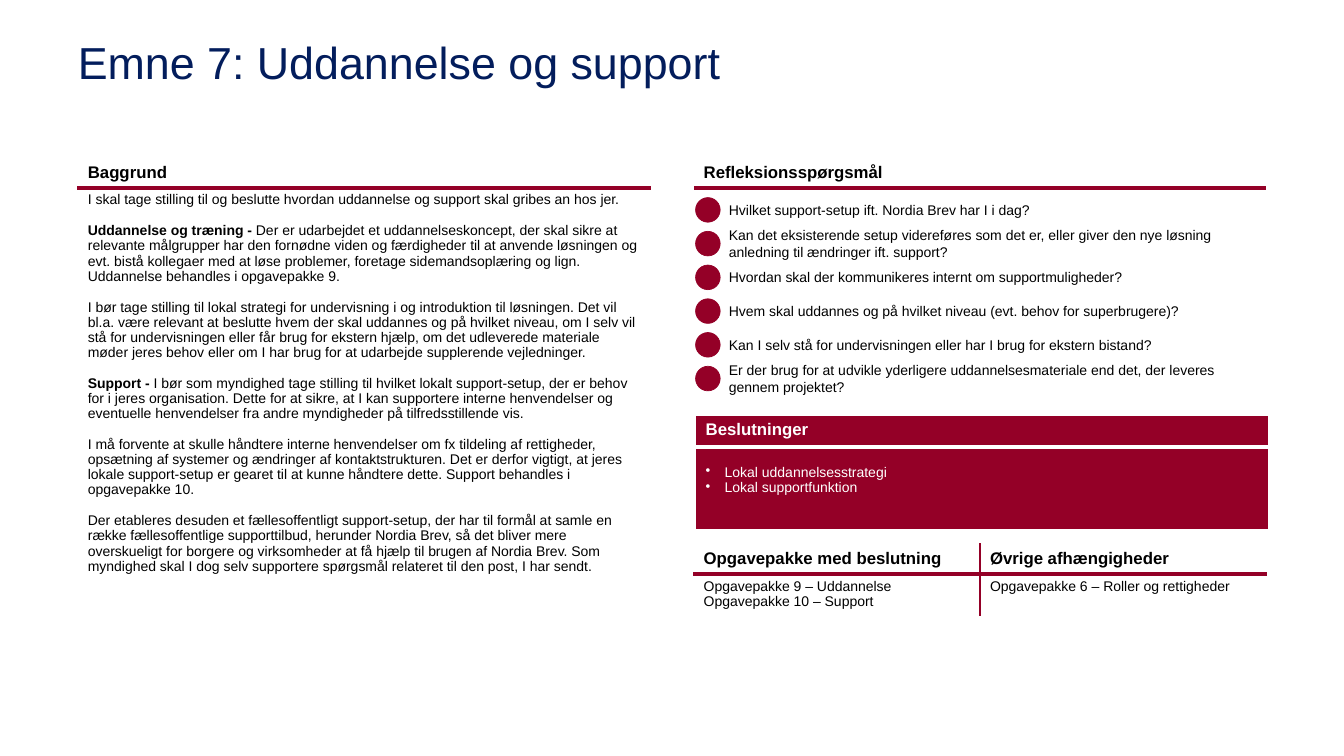
import dataclasses

import lxml.etree
import pptx
import pptx.dml.color
import pptx.enum.shapes
import pptx.enum.text
import pptx.oxml.ns
import pptx.util

Cm, Pt = pptx.util.Cm, pptx.util.Pt
MIDDLE = pptx.enum.text.MSO_ANCHOR.MIDDLE
TOP = pptx.enum.text.MSO_ANCHOR.TOP
LEFT = pptx.enum.text.PP_ALIGN.LEFT

TITLE = "Emne 7: Uddannelse og support"

# Each paragraph is a bold lead-in and the running text after it.
BACKGROUND = [
    ("", "I skal tage stilling til og beslutte hvordan uddannelse og support skal gribes an hos jer."),
    ("Uddannelse og træning - ",
     "Der er udarbejdet et uddannelseskoncept, der skal sikre at relevante målgrupper har den "
     "fornødne viden og færdigheder til at anvende løsningen og evt. bistå kollegaer med at løse "
     "problemer, foretage sidemandsoplæring og lign. Uddannelse behandles i opgavepakke 9."),
    ("", "I bør tage stilling til lokal strategi for undervisning i og introduktion til løsningen. "
     "Det vil bl.a. være relevant at beslutte hvem der skal uddannes og på hvilket niveau, om I "
     "selv vil stå for undervisningen eller får brug for ekstern hjælp, om det udleverede "
     "materiale møder jeres behov eller om I har brug for at udarbejde supplerende vejledninger."),
    ("Support - ",
     "I bør som myndighed tage stilling til hvilket lokalt support-setup, der er behov for i "
     "jeres organisation. Dette for at sikre, at I kan supportere interne henvendelser og "
     "eventuelle henvendelser fra andre myndigheder på tilfredsstillende vis."),
    ("", "I må forvente at skulle håndtere interne henvendelser om fx tildeling af rettigheder, "
     "opsætning af systemer og ændringer af kontaktstrukturen. Det er derfor vigtigt, at jeres "
     "lokale support-setup er gearet til at kunne håndtere dette. Support behandles i "
     "opgavepakke 10."),
    ("", "Der etableres desuden et fællesoffentligt support-setup, der har til formål at samle en "
     "række fællesoffentlige supporttilbud, herunder Nordia Brev, så det bliver mere "
     "overskueligt for borgere og virksomheder at få hjælp til brugen af Nordia Brev. Som "
     "myndighed skal I dog selv supportere spørgsmål relateret til den post, I har sendt."),
]
QUESTIONS = [
    "Hvilket support-setup ift. Nordia Brev har I i dag?",
    "Kan det eksisterende setup videreføres som det er, eller giver den nye løsning "
    "anledning til ændringer ift. support?",
    "Hvordan skal der kommunikeres internt om supportmuligheder?",
    "Hvem skal uddannes og på hvilket niveau (evt. behov for superbrugere)?",
    "Kan I selv stå for undervisningen eller har I brug for ekstern bistand?",
    "Er der brug for at udvikle yderligere uddannelsesmateriale end det, der leveres "
    "gennem projektet?",
]
DECISIONS = [("", "Lokal uddannelsesstrategi"), ("", "Lokal supportfunktion")]
PACKAGES = [("", "Opgavepakke 9 – Uddannelse"), ("", "Opgavepakke 10 – Support")]
DEPENDENCIES = [("", "Opgavepakke 6 – Roller og rettigheder")]


@dataclasses.dataclass(frozen=True)
class Theme:
    font: str = "Arial"
    navy: str = "031D5C"
    wine: str = "940027"
    black: str = "000000"
    white: str = "FFFFFF"
    title_size: int = 32
    heading_size: int = 12
    body_size: int = 10
    rule: float = 3
    divider: float = 1


THEME = Theme()
LEFT_COLUMN, RIGHT_COLUMN, PANEL_LEFT = 1.96, 17.48, 17.53
COLUMN_WIDTH, HEADING_TOP, HEADING_HEIGHT = 14.43, 3.99, 0.74
DOT_TOP, DOT_SIZE, DOT_PITCH = 4.98, 0.62, 0.85
QUESTION_LEFT, QUESTION_WIDTH = 18.37, 13.59


def rgb(colour):
    return pptx.dml.color.RGBColor.from_string(colour)


def write(frame, paragraphs, size, colour, bold=False, line_spacing=1.0, gap=0, bullet=False):
    """Fill a frame with (bold lead-in, text) paragraphs, gap points apart."""
    for index, (lead, text) in enumerate(paragraphs):
        paragraph = frame.add_paragraph() if index else frame.paragraphs[0]
        paragraph.alignment = LEFT
        paragraph.line_spacing = line_spacing
        paragraph.space_before = Pt(gap if index else 0)
        if bullet:
            properties = paragraph._p.get_or_add_pPr()
            properties.set("marL", str(Cm(0.48)))
            properties.set("indent", str(-Cm(0.48)))
            mark = lxml.etree.SubElement(properties, pptx.oxml.ns.qn("a:buChar"))
            mark.set("char", "•")
        for part, strong in ((lead, True), (text, bold)):
            if part:
                run = paragraph.add_run()
                run.text = part
                run.font.name = THEME.font
                run.font.size = Pt(size)
                run.font.bold = strong
                run.font.color.rgb = rgb(colour)


def add_border(cell, side, colour, width):
    """Draw one edge of a cell; call in the order B, T, R, L."""
    edge = lxml.etree.Element(pptx.oxml.ns.qn(f"a:ln{side}"), w=str(Pt(width)))
    fill = lxml.etree.SubElement(edge, pptx.oxml.ns.qn("a:solidFill"))
    lxml.etree.SubElement(fill, pptx.oxml.ns.qn("a:srgbClr"), val=colour)
    cell._tc.get_or_add_tcPr().insert(0, edge)


def add_section(slide, left, top, headings, bodies=(), body_height=0, panel=False,
                line_spacing=1.0, gap=0):
    """Add a heading row with a rule under it and, if given, a row of body cells."""
    rows, columns = (2 if bodies else 1), len(headings)
    heading_height = 0.81 if panel else HEADING_HEIGHT
    table = slide.shapes.add_table(rows, columns, Cm(left), Cm(top), Cm(COLUMN_WIDTH),
                                   Cm(heading_height + body_height)).table
    table.first_row = table.horz_banding = False
    table.rows[0].height = Cm(heading_height)
    if bodies:
        table.rows[1].height = Cm(body_height)
    ink, rule = (THEME.white, THEME.white) if panel else (THEME.black, THEME.wine)
    for row in range(rows):
        for column in range(columns):
            cell = table.cell(row, column)
            if panel:
                cell.fill.solid()
                cell.fill.fore_color.rgb = rgb(THEME.wine)
            else:
                cell.fill.background()
            add_border(cell, "T" if row else "B", rule, THEME.rule)
            if column < columns - 1:
                add_border(cell, "R", THEME.wine, THEME.divider)
            if column:
                add_border(cell, "L", THEME.wine, THEME.divider)
            if row:
                write(cell.text_frame, bodies[column], THEME.body_size, ink,
                      line_spacing=line_spacing, gap=gap, bullet=panel)
                if panel:
                    cell.vertical_anchor = MIDDLE
                    cell.margin_bottom = Cm(0.55)
            else:
                write(cell.text_frame, [("", headings[column])], THEME.heading_size, ink, bold=True)


def add_question(slide, index, question):
    top = DOT_TOP + index * DOT_PITCH
    dot = slide.shapes.add_shape(pptx.enum.shapes.MSO_SHAPE.OVAL, Cm(PANEL_LEFT), Cm(top),
                                 Cm(DOT_SIZE), Cm(DOT_SIZE))
    dot.shadow.inherit = False
    dot.fill.solid()
    dot.fill.fore_color.rgb = rgb(THEME.wine)
    dot.line.color.rgb = rgb(THEME.wine)
    dot.line.width = Pt(0.5)
    label_top = top + (DOT_SIZE - DOT_PITCH) / 2
    frame = slide.shapes.add_textbox(Cm(QUESTION_LEFT), Cm(label_top), Cm(QUESTION_WIDTH),
                                     Cm(DOT_PITCH)).text_frame
    frame.word_wrap = True
    frame.vertical_anchor = MIDDLE
    frame.margin_left = frame.margin_right = frame.margin_top = frame.margin_bottom = 0
    write(frame, [("", question)], THEME.body_size, THEME.black)


def add_title(slide):
    title = slide.shapes.title
    title.left, title.top, title.width, title.height = Cm(1.96), Cm(1.02), Cm(29.97), Cm(2.59)
    frame = title.text_frame
    frame.margin_left = frame.margin_top = frame.margin_bottom = 0
    frame.margin_right = Cm(2.87)
    frame.vertical_anchor = TOP
    write(frame, [("", TITLE)], THEME.title_size, THEME.navy, line_spacing=0.9)


def main():
    deck = pptx.Presentation()
    deck.slide_width, deck.slide_height = Cm(33.87), Cm(19.05)
    slide = deck.slides.add_slide(deck.slide_layouts[5])
    add_title(slide)
    add_section(slide, LEFT_COLUMN, HEADING_TOP, ["Baggrund"], [BACKGROUND], 10.4,
                line_spacing=0.97, gap=11.2)
    add_section(slide, RIGHT_COLUMN, HEADING_TOP, ["Refleksionsspørgsmål"])
    for index, question in enumerate(QUESTIONS):
        add_question(slide, index, question)
    add_section(slide, PANEL_LEFT, 10.46, ["Beslutninger"], [DECISIONS], 2.08, panel=True)
    add_section(slide, RIGHT_COLUMN, 13.7, ["Opgavepakke med beslutning", "Øvrige afhængigheder"],
                [PACKAGES, DEPENDENCIES], 1.06, line_spacing=0.97)
    deck.save("out.pptx")


if __name__ == "__main__":
    main()
